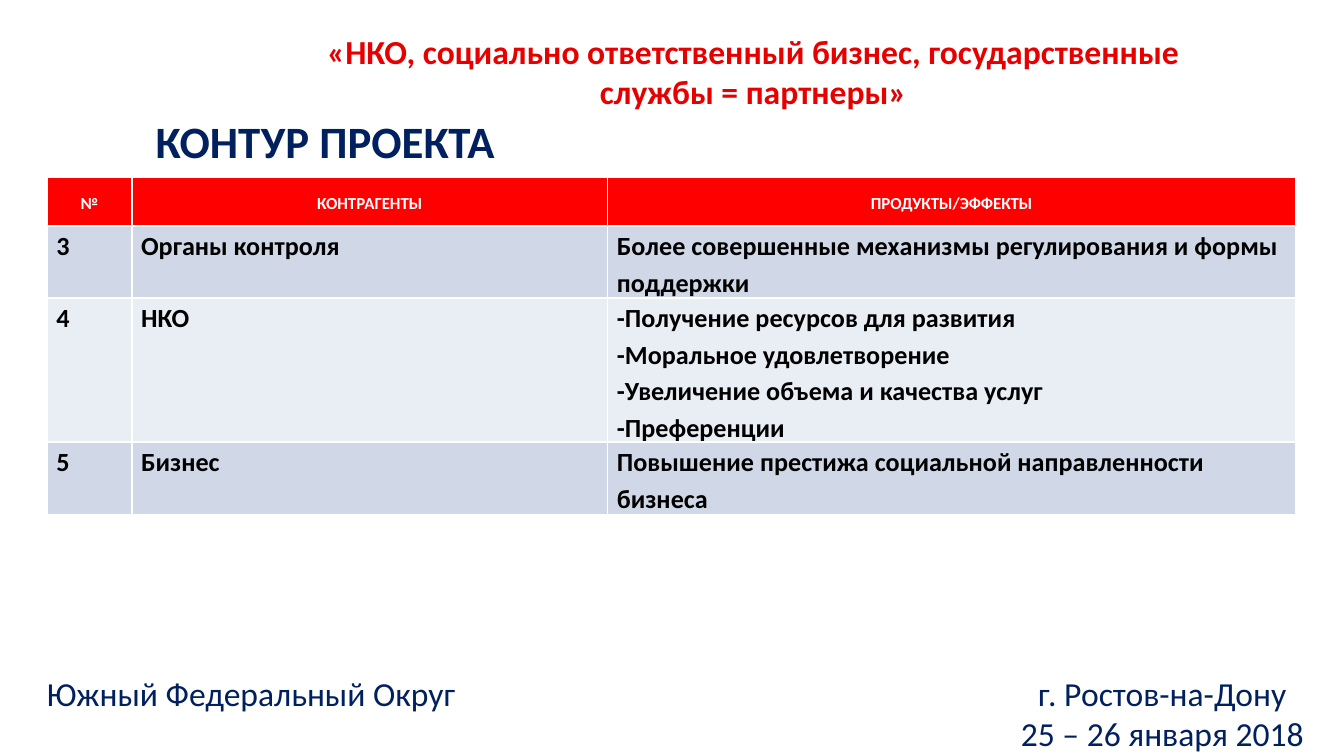
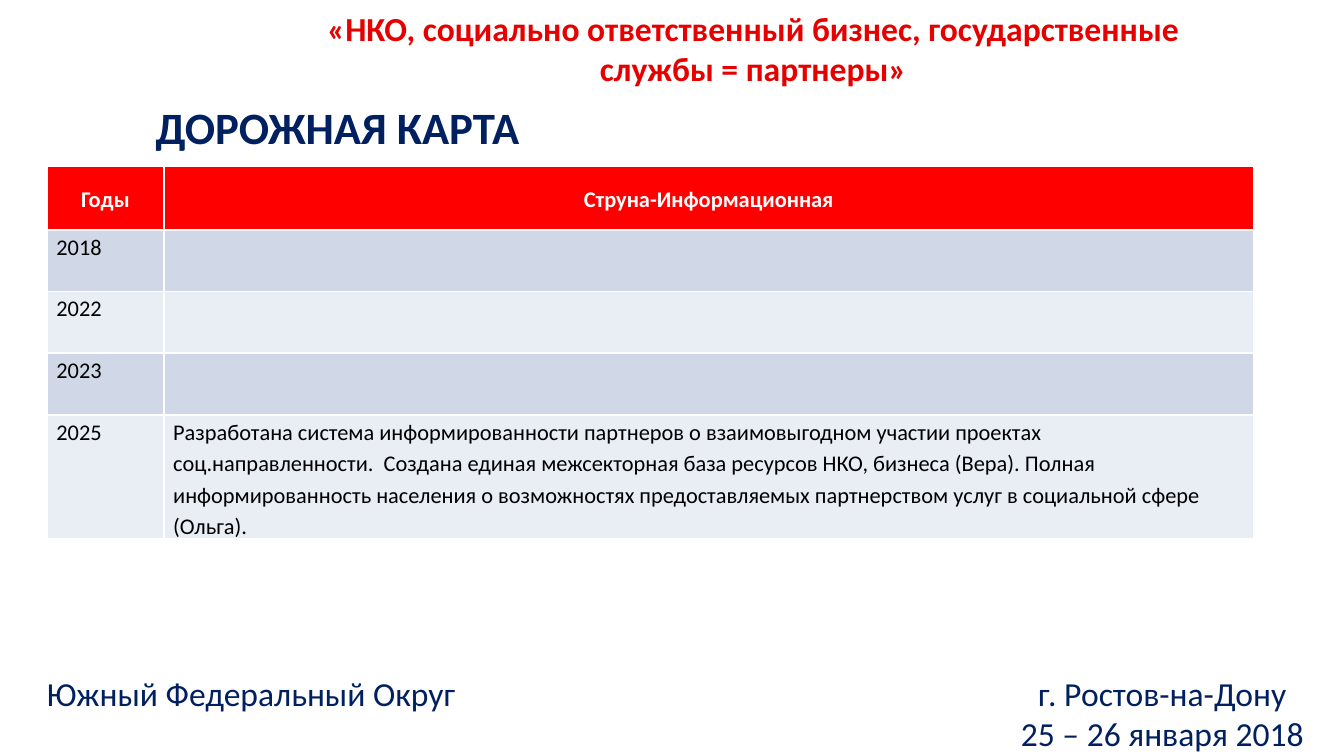
from lxml.etree import SubElement
from pptx import Presentation
from pptx.dml.color import RGBColor
from pptx.enum.text import MSO_ANCHOR, PP_ALIGN
from pptx.oxml.ns import qn
from pptx.util import Pt

COLORS = {
    "navy": "002060",
    "slogan": "E60000",
    "header": "FF0000",
    "white": "FFFFFF",
    "black": "000000",
    "bands": ["D0D8E8", "E9EDF4"],
}
TITLE = {"size": Pt(24), "bold": True}
SLOGAN = {"size": Pt(18), "bold": True}
FOOTER = {"size": Pt(18), "bold": False}
HEADER_MARGINS = {"margin_left": Pt(7.2), "margin_right": Pt(7.2),
                  "margin_top": Pt(3), "margin_bottom": Pt(3)}
BODY_MARGINS = {"margin_left": Pt(5), "margin_right": Pt(5),
                "margin_top": 0, "margin_bottom": 0}

SLOGAN_TEXT = "«НКО, социально ответственный бизнес, государственные службы = партнеры»"
REGION, CITY, DATES = "Южный Федеральный Округ", "г. Ростов-на-Дону", "25 – 26 января 2018"
TAB_STOP = Pt(664)

SLIDES = [
    {
        "title": "КОНТУР ПРОЕКТА",
        "title_top": 57.6, "slogan_top": 27.4, "table_top": 95.2,
        "columns": [45.4, 254.9, 368.6],
        "row_heights": [25.9, 33.1, 67, 33.1],
        "header_font": {"size": Pt(9), "bold": True},
        "body_font": {"size": Pt(14), "bold": True},
        "rows": [
            ["№", "КОНТРАГЕНТЫ", "ПРОДУКТЫ/ЭФФЕКТЫ"],
            ["3", "Органы контроля",
             "Более совершенные механизмы регулирования и формы поддержки"],
            ["4", "НКО",
             "-Получение ресурсов для развития\n-Моральное удовлетворение\n"
             "-Увеличение объема и качества услуг\n-Преференции"],
            ["5", "Бизнес", "Повышение престижа социальной направленности бизнеса"],
        ],
    },
    {
        "title": "ДОРОЖНАЯ КАРТА",
        "title_top": 49.7, "slogan_top": 15.1, "table_top": 89.3,
        "columns": [62.6, 583.9],
        "row_heights": [33.8] + [33.1] * 4,
        "header_font": {"size": Pt(12), "bold": True},
        "body_font": {"size": Pt(12), "bold": False},
        "rows": [
            ["Годы", "Струна-Информационная"],
            ["2018", ""],
            ["2022", ""],
            ["2023", ""],
            ["2025",
             "Разработана система информированности партнеров о взаимовыгодном участии "
             "проектах соц.направленности.  Создана единая межсекторная база ресурсов НКО, "
             "бизнеса (Вера). Полная информированность населения о возможностях "
             "предоставляемых партнерством услуг в социальной сфере (Ольга)."],
        ],
    },
]


def write(frame, text, font, color, align=PP_ALIGN.LEFT, spacing=1.0):
    """Fill a text frame, one paragraph for each line of the text."""
    frame.word_wrap = True
    for number, line in enumerate(text.split("\n")):
        para = frame.paragraphs[0] if number == 0 else frame.add_paragraph()
        para.alignment = align
        para.line_spacing = spacing
        if not line:
            continue
        span = para.add_run()
        span.text = line
        span.font.name = "Calibri"
        span.font.color.rgb = RGBColor.from_string(color)
        for name, value in font.items():
            setattr(span.font, name, value)


def add_box(page, left, top, width, height, anchor=MSO_ANCHOR.MIDDLE):
    box = page.shapes.add_textbox(Pt(left), Pt(top), Pt(width), Pt(height))
    box.text_frame.vertical_anchor = anchor
    return box.text_frame


deck = Presentation()
deck.slide_width, deck.slide_height = Pt(720), Pt(405)

for content in SLIDES:
    page = deck.slides.add_slide(deck.slide_layouts[6])

    title = add_box(page, 76.3, content["title_top"], 360, 36, MSO_ANCHOR.TOP)
    write(title, content["title"], TITLE, COLORS["navy"])

    # The default table style supplies the white grid and the thick header rule
    rows, columns = content["rows"], content["columns"]
    heights = content["row_heights"]
    table = page.shapes.add_table(
        len(rows), len(columns), Pt(25.2), Pt(content["table_top"]),
        Pt(sum(columns)), Pt(sum(heights))).table
    for column, width in zip(table.columns, columns):
        column.width = Pt(width)
    for row_number, (row, height) in enumerate(zip(rows, heights)):
        table.rows[row_number].height = Pt(height)
        is_header = row_number == 0
        fill = COLORS["header"] if is_header else COLORS["bands"][(row_number - 1) % 2]
        for column_number, text in enumerate(row):
            cell = table.cell(row_number, column_number)
            cell.fill.solid()
            cell.fill.fore_color.rgb = RGBColor.from_string(fill)
            for name, value in (HEADER_MARGINS if is_header else BODY_MARGINS).items():
                setattr(cell, name, value)
            if is_header:
                write(cell.text_frame, text, content["header_font"], COLORS["white"],
                      PP_ALIGN.CENTER, 1.5)
            else:
                write(cell.text_frame, text, content["body_font"], COLORS["black"],
                      spacing=1.15)

    # Region on the left and city at a right tab stop share the first line
    footer = add_box(page, 9.4, 365.8, 696.2, 32.4)
    footer.margin_left = Pt(15.8)
    write(footer, f"{REGION}\t{CITY}\n{DATES}", FOOTER, COLORS["navy"])
    place, dates = footer.paragraphs
    dates.alignment = PP_ALIGN.RIGHT
    tabs = SubElement(place._p.get_or_add_pPr(), qn("a:tabLst"))
    SubElement(tabs, qn("a:tab"), pos=str(TAB_STOP), algn="r")

    slogan = add_box(page, 146.2, content["slogan_top"], 514.8, 21.6)
    write(slogan, SLOGAN_TEXT, SLOGAN, COLORS["slogan"], PP_ALIGN.CENTER)

deck.save("out.pptx")
